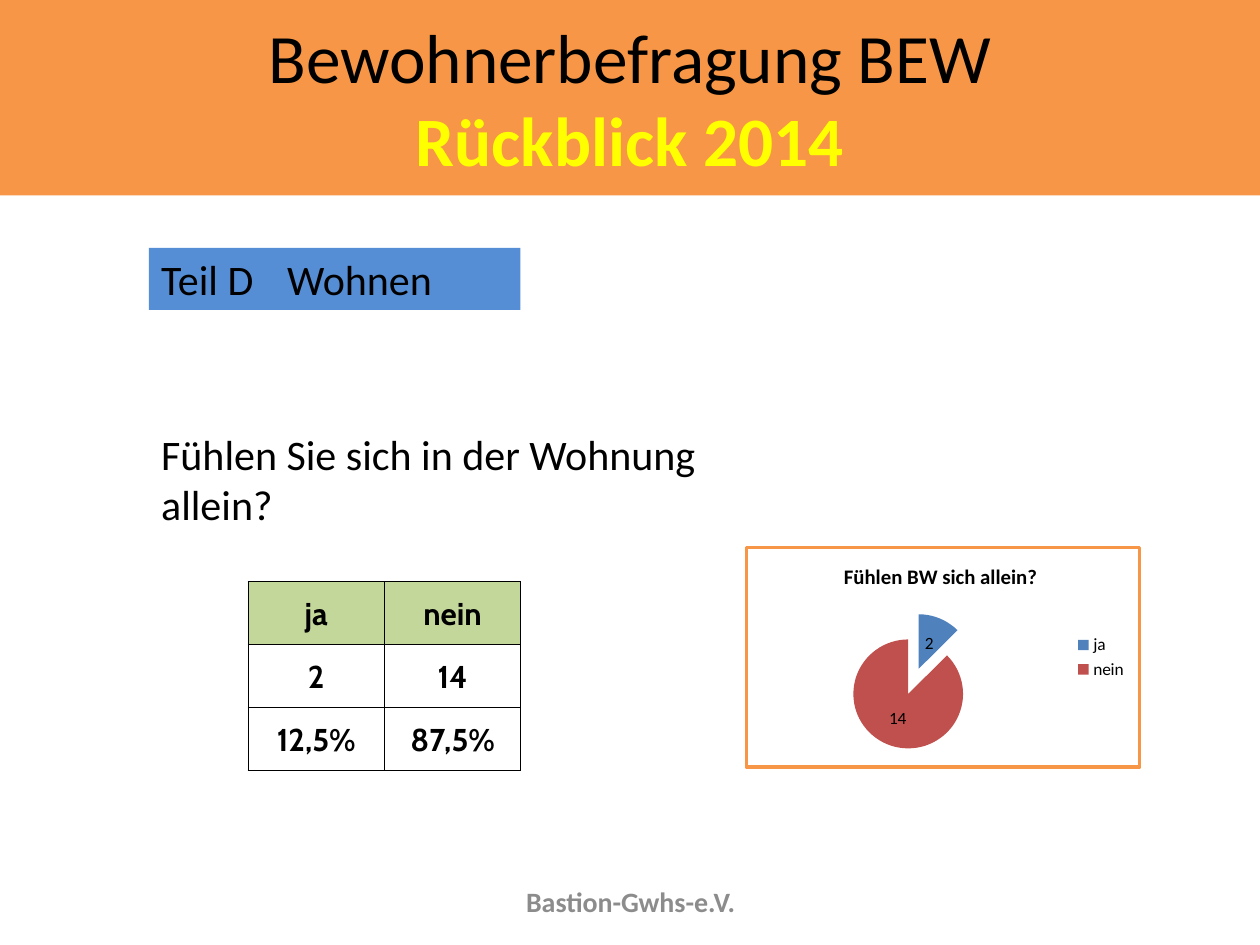
"""Build the survey slide on living alone, with a table and a pie chart."""
from dataclasses import dataclass

from lxml import etree
from pptx import Presentation
from pptx.chart.data import CategoryChartData
from pptx.dml.color import RGBColor
from pptx.enum.chart import XL_CHART_TYPE, XL_LABEL_POSITION, XL_LEGEND_POSITION
from pptx.enum.shapes import MSO_SHAPE
from pptx.enum.text import MSO_ANCHOR, PP_ALIGN
from pptx.oxml import parse_xml
from pptx.oxml.ns import qn
from pptx.util import Cm, Pt

RECT = MSO_SHAPE.RECTANGLE
PIE = XL_CHART_TYPE.PIE
MID, TOP = MSO_ANCHOR.MIDDLE, MSO_ANCHOR.TOP
LEFT, CENTER = PP_ALIGN.LEFT, PP_ALIGN.CENTER
DML = "http://schemas.openxmlformats.org/drawingml/2006/main"
CHART = "http://schemas.openxmlformats.org/drawingml/2006/chart"


@dataclass(frozen=True)
class Theme:
    black: str = "000000"
    white: str = "FFFFFF"
    orange: str = "F79646"
    yellow: str = "FFFF00"
    blue: str = "558ED5"
    gray: str = "8C8C8C"
    green: str = "C4D79B"
    slices: tuple = ("4F81BD", "C0504D")
    font: str = "Calibri"
    grid: str = "Cabin"
    title: float = 39.6
    body: int = 24
    cell: int = 18
    foot: int = 16
    head: int = 12
    label: int = 10


theme = Theme()


def style(font, size, color=theme.black, bold=False, name=theme.font):
    font.size, font.bold, font.name = Pt(size), bold, name
    font.color.rgb = RGBColor.from_string(color)


def write(box, text, size, color=theme.black, bold=False, align=LEFT, anchor=MID):
    frame = box.text_frame
    frame.word_wrap = True
    frame.vertical_anchor = anchor
    para = frame.paragraphs[0]
    para.text = text
    para.alignment = align
    style(para.font, size, color, bold)
    return para


deck = Presentation()
deck.slide_width, deck.slide_height = Cm(25.4), Cm(19.05)
slide = deck.slides.add_slide(deck.slide_layouts[6])
shapes = slide.shapes

bars = []
for x, y, w, h, color in (
    (0, 0, 25.4, 3.94, theme.orange),
    (3, 5, 7.49, 1.25, theme.blue),
):
    bar = shapes.add_shape(RECT, Cm(x), Cm(y), Cm(w), Cm(h))
    bar.shadow.inherit = False
    bar.fill.solid()
    bar.fill.fore_color.rgb = RGBColor.from_string(color)
    bar.line.fill.background()
    bars.append(bar)
banner, part = bars

title = write(banner, "Bewohnerbefragung BEW\v", theme.title, align=CENTER)
year = title.add_run()
year.text = "Rückblick 2014"
style(year.font, theme.title, theme.yellow, True)
write(part, "Teil D\tWohnen", theme.body)

foot = shapes.add_textbox(Cm(8.69), Cm(17.65), Cm(8.05), Cm(1.02))
write(foot, "Bastion-Gwhs-e.V.", theme.foot, theme.gray, True, CENTER)
ask = shapes.add_textbox(Cm(3), Cm(8.51), Cm(13.61), Cm(1.27))
write(ask, "Fühlen Sie sich in der Wohnung allein?", theme.body, anchor=TOP)

data = CategoryChartData(number_format="#,##0")
data.categories = ["ja", "nein"]
data.add_series("Series 1", [2, 14])
chart = shapes.add_chart(PIE, Cm(15.01), Cm(11), Cm(8), Cm(4.5), data).chart
style(chart.font, theme.label)
chart.has_title = True
head = chart.chart_title.text_frame.paragraphs[0]
head.text = "Fühlen BW sich allein? "
style(head.font, theme.head, bold=True)
chart.has_legend = True
chart.legend.position = XL_LEGEND_POSITION.RIGHT
chart.legend.include_in_layout = False

plot = chart.plots[0]
plot.vary_by_categories = True
plot.has_data_labels = True
tags = plot.data_labels
tags.show_value = True
tags.show_percentage = False
tags.number_format = "#,##0"
tags.number_format_is_linked = False
tags.position = XL_LABEL_POSITION.CENTER
style(tags.font, theme.label)

pie = plot.series[0]
for i, color in enumerate(theme.slices):
    fill = pie.points[i].format.fill
    fill.solid()
    fill.fore_color.rgb = RGBColor.from_string(color)
burst = etree.Element(qn("c:explosion"), val="25")
pie.points[0].format
pie._element.find(qn("c:dPt")).addprevious(burst)

area = chart.element.find(".//" + qn("c:plotArea"))
for old in area.findall(qn("c:layout")):
    area.remove(old)
layout = etree.Element(qn("c:layout"))
manual = etree.SubElement(layout, qn("c:manualLayout"))
for tag, val in (
    ("layoutTarget", "inner"), ("xMode", "edge"), ("yMode", "edge"),
    ("x", "0.24"), ("y", "0.3"), ("w", "0.37"), ("h", "0.62"),
):
    etree.SubElement(manual, qn("c:" + tag), val=val)
area.insert(0, layout)

frame = parse_xml(
    f'<c:spPr xmlns:c="{CHART}" xmlns:a="{DML}">'
    f'<a:solidFill><a:srgbClr val="{theme.white}"/></a:solidFill>'
    f'<a:ln w="{Pt(2)}"><a:solidFill><a:srgbClr val="{theme.orange}"/></a:solidFill></a:ln>'
    "</c:spPr>"
)
chart.element.find(qn("c:chart")).addnext(frame)

rows = (("ja", "nein"), ("2", "14"), ("12,5%", "87,5%"))
table = shapes.add_table(3, 2, Cm(5), Cm(11.73), Cm(5.5), Cm(3.81)).table
for r, row in enumerate(rows):
    for c, text in enumerate(row):
        cell = table.cell(r, c)
        cell.vertical_anchor = MID
        cell.margin_left = cell.margin_right = cell.margin_top = Cm(0.03)
        cell.margin_bottom = 0
        para = cell.text_frame.paragraphs[0]
        para.text = text
        para.alignment = CENTER
        style(para.font, theme.cell, bold=True, name=theme.grid)
        props = cell._tc.get_or_add_tcPr()
        for side in "LRTB":
            props.append(parse_xml(
                f'<a:ln{side} xmlns:a="{DML}" w="{Pt(0.5)}"><a:solidFill>'
                f'<a:srgbClr val="{theme.black}"/></a:solidFill></a:ln{side}>'
            ))
        if r:
            cell.fill.background()
        else:
            cell.fill.solid()
            cell.fill.fore_color.rgb = RGBColor.from_string(theme.green)

deck.save("out.pptx")
